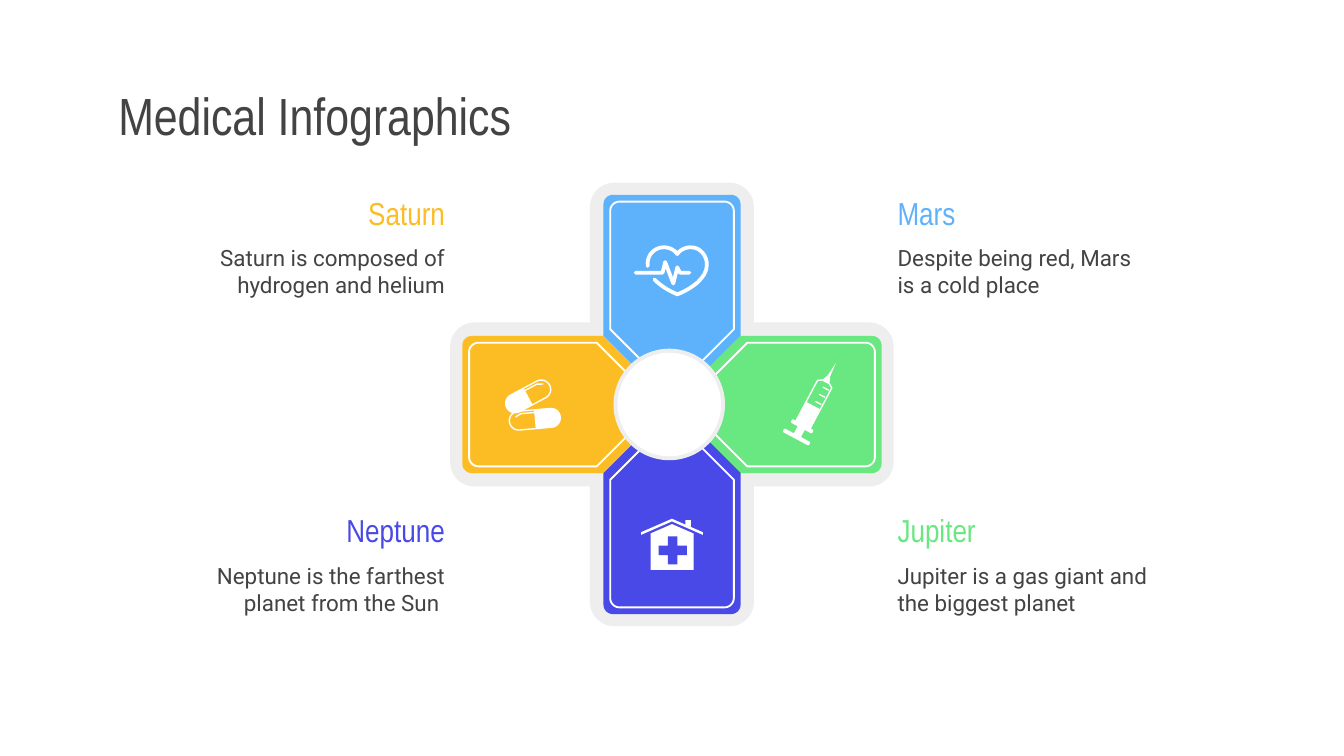
import math

import pptx
import pptx.dml.color
import pptx.enum.shapes
import pptx.enum.text
import pptx.oxml.ns
import pptx.util

WIDTH = 10
HEIGHT = WIDTH * 9 / 16
CENTER = (5, 3.01)
HUB_CENTER = (4.98, 3.01)
WHITE, PALE, INK = "FFFFFF", "EEEEEE", "434343"
BLUE, GREEN, INDIGO, YELLOW = "5EB2FC", "69E781", "4949E7", "FCBD24"
HEADING_FONT, BODY_FONT = "Arial Narrow", "Roboto"

TITLE = "Medical Infographics"
ARM_COLORS = [BLUE, GREEN, INDIGO, YELLOW]  # clockwise from the top
LABELS = [  # column, row, heading, description, color
    (0, 0, "Saturn", "Saturn is composed of hydrogen and helium", YELLOW),
    (0, 1, "Neptune", "Neptune is the farthest planet from the Sun ", INDIGO),
    (1, 0, "Mars", "Despite being red, Mars is a cold place", BLUE),
    (1, 1, "Jupiter", "Jupiter is a gas giant and the biggest planet", GREEN),
]
LABEL_LEFTS, LABEL_TOPS, LABEL_WIDTH = (1.35, 6.58), (1.35, 3.71), 2.06

# Outlines are (x, y, corner radius), measured from the cross center
CROSS_CORNERS = [(-0.61, -1.65, 0.18), (0.61, -1.65, 0.18), (0.61, -0.61, 0)]
ARM = [(-0.51, -1.56, 0.07), (0.51, -1.56, 0.07), (0.51, -0.51, 0), (0, 0, 0), (-0.51, -0.51, 0)]
ARM_BORDER = [(-0.46, -1.51, 0.07), (0.46, -1.51, 0.07), (0.46, -0.56, 0),
              (0, -0.1, 0), (-0.46, -0.56, 0)]

HEART_START = (4.82, 1.98)
HEART_CURVES = [  # two control points and an end point
    ((4.81, 1.9), (4.87, 1.84), (4.94, 1.84)),
    ((4.98, 1.84), (5.02, 1.86), (5.04, 1.89)),
    ((5.06, 1.86), (5.1, 1.84), (5.14, 1.84)),
    ((5.21, 1.84), (5.26, 1.9), (5.26, 1.97)),
    ((5.26, 2.1), (5.07, 2.18), (5.04, 2.19)),
    ((5.02, 2.18), (4.94, 2.15), (4.87, 2.08)),
]
PULSE = [(4.73, 2.03), (4.93, 2.03), (4.95, 1.95), (5.01, 2.11), (5.04, 1.99), (5.06, 2.03), (5.13, 2.03)]

PILLS = [  # center, angle, half length, side of the solid half
    ((3.93, 2.95), -28, 0.18, -1),
    ((3.98, 3.12), -5, 0.19, 1),
]
PILL_RADIUS = 0.07

# Syringe: tip at the origin, pointing up
SYRINGE_TIP, SYRINGE_ANGLE = (6.22, 2.7), 28
NEEDLE = [(0, 0), (0.01, 0.11), (-0.01, 0.11)]
NOZZLE = [(-0.01, 0.11), (0.01, 0.11), (0.03, 0.16), (-0.03, 0.16)]
BARREL = [(-0.03, 0.16), (0.03, 0.16), (0.06, 0.18), (0.06, 0.52), (-0.06, 0.52), (-0.06, 0.18)]
SYRINGE_BARS = [  # left, top, right, bottom, corner radius
    (-0.06, 0.36, 0.06, 0.52, 0), (-0.09, 0.52, 0.09, 0.55, 0.01),
    (-0.03, 0.54, 0.03, 0.63, 0), (-0.11, 0.61, 0.11, 0.64, 0.01),
] + [(0, top, 0.05, top + 0.01, 0) for top in (0.2, 0.26, 0.32)]

HOUSE = [
    [(5, 3.86), (4.77, 3.96), (4.77, 3.98), (5, 3.88), (5.23, 3.98), (5.23, 3.96)],
    [(5.1, 3.87), (5.1, 3.91), (5.14, 3.92), (5.14, 3.87)],
    [(5, 3.9), (4.84, 3.97), (4.84, 4.24), (5.16, 4.24), (5.16, 3.97)],
]


def rgb(value):
    return pptx.dml.color.RGBColor.from_string(value)


def inches(*values):
    return [pptx.util.Inches(value) for value in values]


def bezier(start, first, second, end, steps=10):
    """Points along a cubic curve, without its start."""
    points = []
    for step in range(1, steps + 1):
        t = step / steps
        weights = ((1 - t) ** 3, 3 * t * (1 - t) ** 2, 3 * t * t * (1 - t), t ** 3)
        points.append(tuple(sum(w * p[axis] for w, p in zip(weights, (start, first, second, end)))
                            for axis in (0, 1)))
    return points


def rounded(corners):
    """Turn (x, y, radius) corners into points; right-angled corners get an arc."""
    points = []
    for index, (x, y, radius) in enumerate(corners):
        if not radius:
            points.append((x, y))
            continue
        ends = []
        for other in (corners[index - 1], corners[(index + 1) % len(corners)]):
            share = radius / math.dist((x, y), other[:2])
            ends.append((x + (other[0] - x) * share, y + (other[1] - y) * share))
        controls = [(a + (x - a) * 0.55, b + (y - b) * 0.55) for a, b in ends]
        points += [ends[0]] + bezier(ends[0], *controls, ends[1])
    return points


def box(left, top, right, bottom, radius=0):
    return rounded([(left, top, radius), (right, top, radius),
                    (right, bottom, radius), (left, bottom, radius)])


def place(points, origin, degrees=0):
    """Rotate points clockwise and move them to the origin."""
    cosine, sine = math.cos(math.radians(degrees)), math.sin(math.radians(degrees))
    return [(origin[0] + x * cosine - y * sine, origin[1] + x * sine + y * cosine)
            for x, y in points]


def paint(shape, fill=None, line=None, weight=1):
    shape.shadow.inherit = False
    if fill:
        shape.fill.solid()
        shape.fill.fore_color.rgb = rgb(fill)
    else:
        shape.fill.background()
    if line:
        shape.line.color.rgb = rgb(line)
        shape.line.width = pptx.util.Pt(weight)
    else:
        shape.line.fill.background()
    return shape


def draw(shapes, points, fill=None, line=None, weight=1, close=True):
    points = [inches(*point) for point in points]
    builder = shapes.build_freeform(*points[0], scale=1.0)
    builder.add_line_segments(points[1:], close=close)
    return paint(builder.convert_to_shape(), fill, line, weight)


def draw_stroke(shapes, points, weight):
    shape = draw(shapes, points, line=WHITE, weight=weight, close=False)
    line = shape.element.spPr.find(pptx.oxml.ns.qn("a:ln"))
    line.set("cap", "rnd")


def write(shape, text, size, font, color, align):
    frame = shape.text_frame
    frame.word_wrap = True
    frame.vertical_anchor = pptx.enum.text.MSO_ANCHOR.MIDDLE
    frame.margin_left = frame.margin_right = frame.margin_top = frame.margin_bottom = pptx.util.Inches(0.1)
    paragraph = frame.paragraphs[0]
    paragraph.alignment = align
    run = paragraph.add_run()
    run.text = text
    run.font.size = pptx.util.Pt(size)
    run.font.name = font
    run.font.color.rgb = rgb(color)


def draw_cross(shapes):
    corners = [(*place([(x, y)], (0, 0), 90 * turn)[0], radius)
               for turn in range(4) for x, y, radius in CROSS_CORNERS]
    draw(shapes, place(rounded(corners), CENTER), PALE)
    for turn, color in enumerate(ARM_COLORS):
        arm = shapes.add_group_shape().shapes
        draw(arm, place(rounded(ARM), CENTER, 90 * turn), color)
        draw(arm, place(rounded(ARM_BORDER), CENTER, 90 * turn), line=WHITE)
    for diameter, color in ((0.83, PALE), (0.77, WHITE)):
        left, top = (middle - diameter / 2 for middle in HUB_CENTER)
        paint(shapes.add_shape(pptx.enum.shapes.MSO_SHAPE.OVAL,
                               *inches(left, top, diameter, diameter)), color)


def draw_heart(shapes):
    points = [HEART_START]
    for curve in HEART_CURVES:
        points += bezier(points[-1], *curve)
    draw_stroke(shapes, points, 2)
    draw_stroke(shapes, PULSE, 2)


def draw_pills(shapes):
    for center, angle, half, side in PILLS:
        capsule = box(-half, -PILL_RADIUS, half, PILL_RADIUS, PILL_RADIUS)
        solid = [(x if x * side > 0 else 0, y) for x, y in capsule]
        shine = [(side * 0.04, -0.05), (-side * 0.1, -0.05), (-side * 0.14, -0.03)]
        draw(shapes, place(capsule, center, angle), line=WHITE, weight=0.75)
        draw(shapes, place(solid, center, angle), WHITE)
        draw_stroke(shapes, place(shine, center, angle), 0.75)


def draw_syringe(shapes):
    draw(shapes, place(BARREL, SYRINGE_TIP, SYRINGE_ANGLE), line=WHITE, weight=0.75)
    for part in [NEEDLE, NOZZLE] + [box(*bar) for bar in SYRINGE_BARS]:
        draw(shapes, place(part, SYRINGE_TIP, SYRINGE_ANGLE), WHITE)


def draw_house(shapes):
    for part in HOUSE:
        draw(shapes, part, WHITE)
    plus = shapes.add_shape(pptx.enum.shapes.MSO_SHAPE.CROSS, *inches(4.9, 3.99, 0.21, 0.21))
    plus.adjustments[0] = 0.33
    paint(plus, INDIGO)


def main():
    presentation = pptx.Presentation()
    presentation.slide_width, presentation.slide_height = inches(WIDTH, HEIGHT)
    slide = presentation.slides.add_slide(presentation.slide_layouts[5])
    title = slide.shapes.title
    title.left, title.top, title.width, title.height = inches(0.78, 0.59, 8.45, 0.53)
    write(title, TITLE, 28, HEADING_FONT, INK, pptx.enum.text.PP_ALIGN.LEFT)

    draw_cross(slide.shapes)
    for draw_icon in (draw_heart, draw_syringe, draw_house, draw_pills):
        draw_icon(slide.shapes.add_group_shape().shapes)

    aligns = (pptx.enum.text.PP_ALIGN.RIGHT, pptx.enum.text.PP_ALIGN.LEFT)
    for column, row, heading, description, color in LABELS:
        left, top = LABEL_LEFTS[column], LABEL_TOPS[row]
        heading_box = slide.shapes.add_textbox(*inches(left, top, LABEL_WIDTH, 0.47))
        write(heading_box, heading, 17, HEADING_FONT, color, aligns[column])
        description_box = slide.shapes.add_textbox(*inches(left, top + 0.38, LABEL_WIDTH, 0.58))
        write(description_box, description, 12, BODY_FONT, INK, aligns[column])
    presentation.save("out.pptx")


if __name__ == "__main__":
    main()
